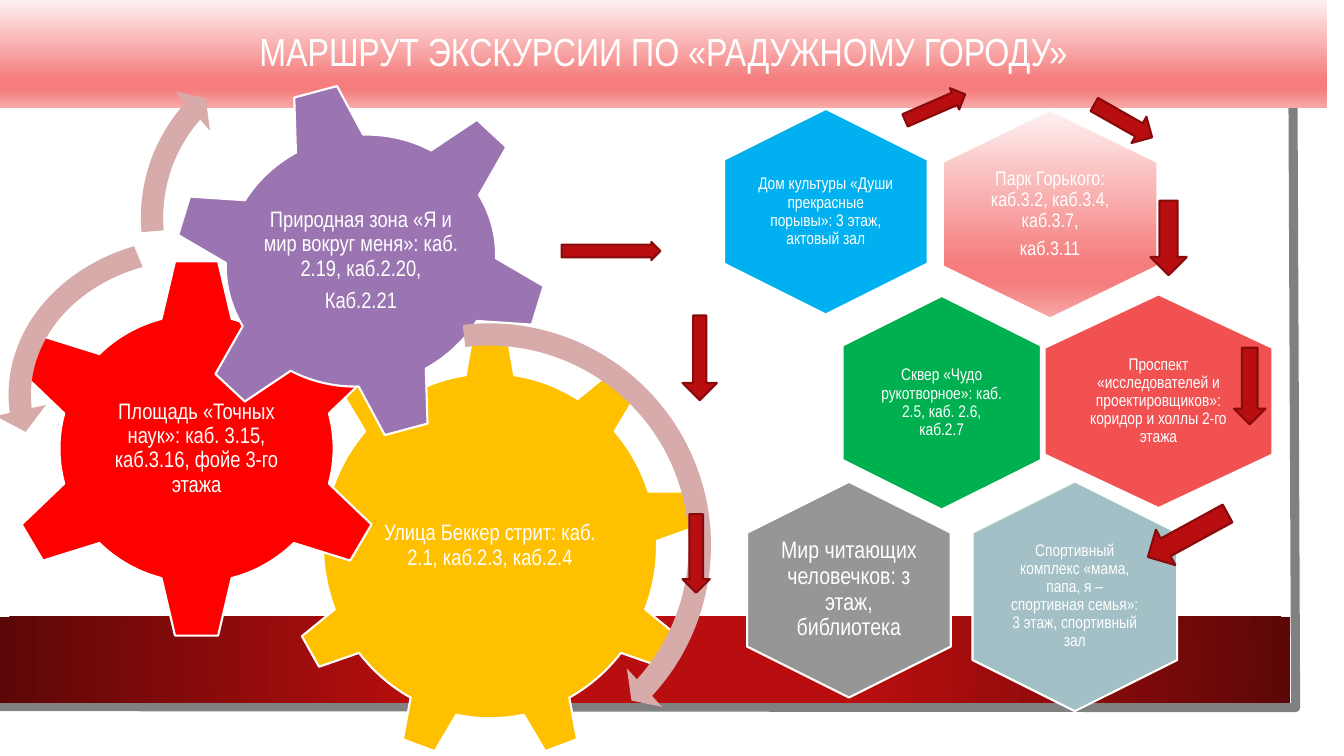
from lxml import etree
from pptx import Presentation
from pptx import util as u
from pptx.dml.color import RGBColor
from pptx.enum import shapes, text
from pptx.oxml import ns

COLS, ROWS = 1333, 750
CELL = u.Inches(0.01)
KIND = shapes.MSO_SHAPE
FONT = "Arial Narrow"
WHITE, RED, EDGE, ROSE = "FFFFFF", "B80E0F", "880A0B", "D8ABAB"
BLUSH = [(0, "FEF1F1"), (74, "F57D7D"), (83, "F57D7D"), (100, "F8A8A8")]

GEARS = [
    (KIND.GEAR_9, (279, 329, 414, 425), 0, "FFC000", (248, 220),
     ["Улица Беккер стрит: каб. 2.1, каб.2.3, каб.2.4"]),
    (KIND.GEAR_6, (2, 255, 386, 380), 0, "FF0000", (193, 188),
     ["Площадь «Точных наук»: каб. 3.15, каб.3.16, фойе 3-го этажа"]),
    (KIND.GEAR_6, (170, 81, 376, 355), 345, "9B75B2", (208, 202),
     ["Природная зона «Я и мир вокруг меня»: каб. 2.19, каб.2.20,", "Каб.2.21"]),
]
ARCS = [
    (KIND.CIRCULAR_ARROW, (250, 306, 470, 470), [0.047, 2.99, 25.485, 157.934, 0.055]),
    (KIND.LEFT_CIRCULAR_ARROW, (-6, 221, 401, 341), [0.065, 4.3, 104.891, 148.378, 0.075]),
    (KIND.CIRCULAR_ARROW, (125, 32, 368, 368), [0.06, 3.941, 133.138, 105.082, 0.07]),
]
HEXES = [
    ((938, 106, 207, 213), BLUSH, 14, 6,
     ["Парк Горького: каб.3.2, каб.3.4, каб.3.7,", "каб.3.11"]),
    ((717, 109, 204, 202), "00B0F0", 12, 0,
     ["Дом культуры «Души прекрасные порывы»: 3 этаж, актовый зал"]),
    ((828, 301, 212, 197), "00B050", 12, 5,
     ["Сквер «Чудо рукотворное»: каб. 2.5, каб. 2.6, каб.2.7"]),
    ((1043, 285, 212, 226), "F25152", 12, 0,
     ["Проспект «исследователей и проектировщиков»: коридор и холлы 2-го этажа"]),
    ((952, 490, 228, 203), "A2C0C5", 12, 5,
     ["Спортивный комплекс «мама, папа, я – спортивная семья»: 3 этаж, спортивный зал"]),
    ((735, 484, 214, 202), "969696", 17, 0,
     ["Мир читающих человечков: з этаж, библиотека"]),
]
ARROWS = [
    (KIND.RIGHT_ARROW, (557, 240, 98, 18), 0, [0.705, 0.5]),
    (KIND.DOWN_ARROW, (677, 313, 34, 84), 0, [0.38, 0.5]),
    (KIND.DOWN_ARROW, (677, 510, 27, 78), 0, []),
    (KIND.RIGHT_ARROW, (895, 95, 65, 23), 336.5, [0.577, 0.5]),
    (KIND.RIGHT_ARROW, (1081, 105, 66, 30), 29.6, []),
    (KIND.RIGHT_ARROW, (1122, 218, 74, 36), 90, []),
    (KIND.DOWN_ARROW, (1224, 345, 31, 76), 0, []),
    (KIND.DOWN_ARROW, (1158, 486, 40, 90), 61.3, []),
]


def tint(part, code):
    part.rgb = RGBColor.from_string(code)


def dress(item, **vals):
    for key, val in vals.items():
        setattr(item, key, val)


def place(box):
    return [int(n * CELL) for n in box]


def blend(shape, stops, round_=False):
    props = shape._element.spPr
    for old in props.findall(ns.qn("a:solidFill")):
        props.remove(old)
    grad = etree.Element(ns.qn("a:gradFill"), rotWithShape="0")
    line = etree.SubElement(grad, ns.qn("a:gsLst"))
    for pos, code in stops:
        stop = etree.SubElement(line, ns.qn("a:gs"), pos=str(pos * 1000))
        etree.SubElement(stop, ns.qn("a:srgbClr"), val=code)
    if round_:
        way = etree.SubElement(grad, ns.qn("a:path"), path="circle")
        mid = dict.fromkeys("ltrb", "50000")
        etree.SubElement(way, ns.qn("a:fillToRect"), **mid)
    else:
        etree.SubElement(grad, ns.qn("a:lin"), ang="5400000", scaled="0")
    geom = props.find(ns.qn("a:prstGeom"))
    if geom is None:
        props.find(ns.qn("a:xfrm")).addnext(grad)
    else:
        geom.addnext(grad)


def draw(slide, kind, box, fill, edge=None, turn=0, bends=(), round_=False):
    shape = slide.shapes.add_shape(kind, *place(box))
    shape.shadow.inherit = False
    shape.rotation = turn
    for i, bend in enumerate(bends):
        shape.adjustments[i] = bend
    if isinstance(fill, str):
        shape.fill.solid()
        tint(shape.fill.fore_color, fill)
    else:
        blend(shape, fill, round_)
    if edge:
        tint(shape.line.color, edge)
        shape.line.width = u.Pt(1.5)
    else:
        shape.line.fill.background()
    return shape


def write(frame, lines, size, pad):
    edge = int(pad * CELL)
    dress(frame, word_wrap=True, auto_size=text.MSO_AUTO_SIZE.NONE,
          vertical_anchor=text.MSO_ANCHOR.MIDDLE, margin_left=edge,
          margin_right=edge, margin_top=edge, margin_bottom=edge)
    for i, line in enumerate(lines):
        para = frame.paragraphs[0] if i == 0 else frame.add_paragraph()
        para.text = line
        dress(para, alignment=text.PP_ALIGN.CENTER, line_spacing=0.9,
              space_after=u.Pt(size * 0.35))
        dress(para.font, name=FONT, size=u.Pt(size))
        tint(para.font.color, WHITE)


def label(slide, box, span, lines, size, pad):
    left, top, wide, high = box
    w, h = span
    spot = (left + (wide - w) / 2, top + (high - h) / 2, w, h)
    write(slide.shapes.add_textbox(*place(spot)).text_frame, lines, size, pad)


def frame(slide):
    draw(slide, KIND.RECTANGLE, (0, 0, 1310, 727), WHITE)
    path = slide.shapes.build_freeform(1282, 0, scale=CELL)
    path.add_line_segments([(1285, 702), (-3, 701)], close=False)
    rim = path.convert_to_shape()
    rim.shadow.inherit = False
    rim.fill.background()
    tint(rim.line.color, "808080")
    rim.line.width = u.Pt(6.5)
    draw(slide, KIND.RECTANGLE, (0, 612, 1280, 85),
         [(34, RED), (100, "5C0707")], round_=True)


def head(slide):
    title = slide.shapes.title
    slide.shapes._spTree.append(title._element)
    dress(title, **dict(zip(("left", "top", "width", "height"),
                            place((0, 0, 1316, 107)))))
    blend(title, BLUSH)
    write(title.text_frame, ["МАРШРУТ ЭКСКУРСИИ ПО «РАДУЖНОМУ ГОРОДУ»"], 28, 5)
    title.text_frame.paragraphs[0].space_after = u.Pt(0)


def main():
    deck = Presentation()
    dress(deck, slide_width=COLS * CELL, slide_height=ROWS * CELL)
    slide = deck.slides.add_slide(deck.slide_layouts[5])
    frame(slide)
    head(slide)
    for kind, box, turn, fill, span, lines in GEARS:
        draw(slide, kind, box, fill, WHITE, turn)
        label(slide, box, span, lines, 16, 2)
    for kind, box, bends in ARCS:
        draw(slide, kind, box, ROSE, bends=bends)
    for box, fill, size, pad, lines in HEXES:
        draw(slide, KIND.HEXAGON, box, fill, WHITE, 90)
        label(slide, box, (box[3] * 0.68, box[2] * 0.68), lines, size, pad)
    for kind, box, turn, bends in ARROWS:
        draw(slide, kind, box, RED, EDGE, turn, bends)
    deck.save("out.pptx")


if __name__ == "__main__":
    main()
